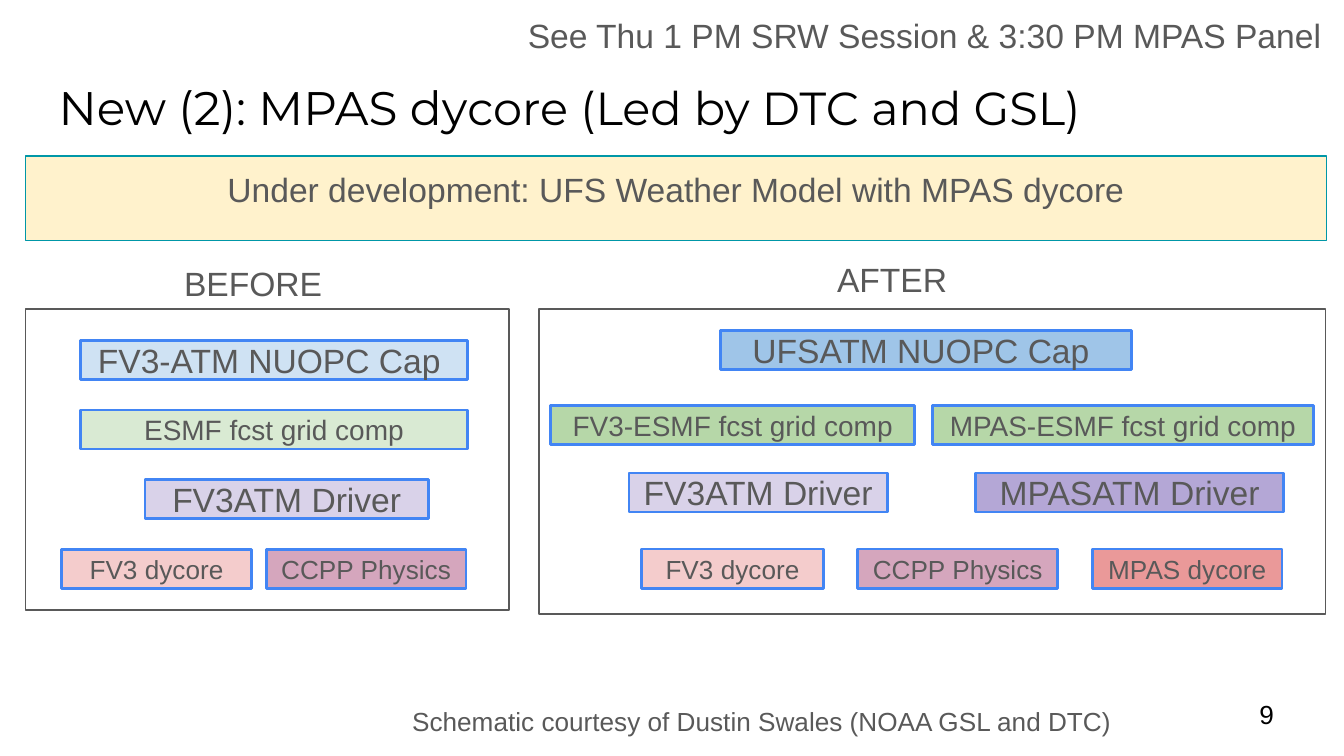
from pptx import Presentation
from pptx.dml.color import RGBColor
from pptx.enum.shapes import MSO_SHAPE as Shape
from pptx.enum.text import MSO_ANCHOR as Anchor, PP_ALIGN as Align
from pptx.util import Cm, Pt

BLACK = RGBColor(0x00, 0x00, 0x00)
GRAY = RGBColor(0x59, 0x59, 0x59)
CREAM = RGBColor(0xFF, 0xF2, 0xCC)
TEAL = RGBColor(0x00, 0x97, 0xA7)
BLUE = RGBColor(0x42, 0x85, 0xF4)
PALE_BLUE = RGBColor(0xCF, 0xE2, 0xF3)
SKY_BLUE = RGBColor(0x9F, 0xC5, 0xE8)
PALE_GREEN = RGBColor(0xD9, 0xEA, 0xD3)
GREEN = RGBColor(0xB6, 0xD7, 0xA8)
PALE_PURPLE = RGBColor(0xD9, 0xD2, 0xE9)
PURPLE = RGBColor(0xB4, 0xA7, 0xD6)
PINK = RGBColor(0xF4, 0xCC, 0xCC)
MAUVE = RGBColor(0xD5, 0xA6, 0xBD)
RED = RGBColor(0xEA, 0x99, 0x99)

BLOCK_HEIGHT = 0.74
BEFORE_TOP, BEFORE_PITCH = 6.43, 1.32

BEFORE_ROWS = [
    (18, [("FV3-ATM NUOPC Cap ", 1.52, 7.32, PALE_BLUE)]),
    (15, [("ESMF fcst grid comp", 1.52, 7.32, PALE_GREEN)]),
    (18, [("FV3ATM Driver", 2.74, 5.36, PALE_PURPLE)]),
    (14, [("FV3 dycore", 1.17, 3.58, PINK),
          ("CCPP Physics", 5.03, 3.78, MAUVE)]),
]
AFTER_TOPS = [6.25, 7.67, 8.94, 10.38]
AFTER_ROWS = [
    (18, [("UFSATM NUOPC Cap ", 13.61, 7.77, SKY_BLUE)]),
    (15, [("FV3-ESMF fcst grid comp", 10.41, 6.88, GREEN),
          ("MPAS-ESMF fcst grid comp", 17.63, 7.19, GREEN)]),
    (18, [("FV3ATM Driver", 11.89, 4.88, PALE_PURPLE),
          ("MPASATM Driver", 18.44, 5.82, PURPLE)]),
    (14, [("FV3 dycore", 12.12, 3.45, PINK),
          ("CCPP Physics", 16.21, 3.78, MAUVE),
          ("MPAS dycore", 20.65, 3.58, RED)]),
]


def style_span(span, size, color=GRAY, font="Arial"):
    """Give a run its font, size and colour."""
    span.font.name = font
    span.font.size = Pt(size)
    span.font.color.rgb = color


def set_text(box, text, size, color=GRAY, align=Align.LEFT, anchor=Anchor.TOP):
    """Write one paragraph into a shape with even insets."""
    frame = box.text_frame
    frame.word_wrap = True
    frame.vertical_anchor = anchor
    frame.margin_left = frame.margin_right = Cm(0.25)
    frame.margin_top = frame.margin_bottom = Cm(0.25)
    para = frame.paragraphs[0]
    para.text = text
    para.alignment = align
    for span in para.runs:
        style_span(span, size, color)


def add_label(page, area, text, size, **options):
    """Add a text box at an area given in centimetres."""
    box = page.shapes.add_textbox(*map(Cm, area))
    set_text(box, text, size, **options)
    return box


def add_box(page, area, fill, line, width):
    """Add a flat rectangle, unfilled when fill is None."""
    box = page.shapes.add_shape(Shape.RECTANGLE, *map(Cm, area))
    box.shadow.inherit = False
    if fill is None:
        box.fill.background()
    else:
        box.fill.solid()
        box.fill.fore_color.rgb = fill
    box.line.color.rgb = line
    box.line.width = Pt(width)
    return box


def add_stack(page, tops, rows):
    """Add the rows of component blocks of one architecture."""
    for top, (size, blocks) in zip(tops, rows):
        for text, left, width, fill in blocks:
            box = add_box(page, (left, top, width, BLOCK_HEIGHT), fill, BLUE, 1.5)
            set_text(box, text, size, align=Align.CENTER, anchor=Anchor.MIDDLE)


def add_title(page):
    """Add the title, whose two parts differ slightly in size."""
    box = add_label(page, (0.86, 1.24, 23.67, 1.6), "New (2): MPAS dy", 25.2)
    para = box.text_frame.paragraphs[0]
    para.add_run().text = "core (Led by DTC and GSL)"
    for span, size in zip(para.runs, (25.2, 24.8)):
        style_span(span, size, BLACK, "Montserrat")


def main():
    """Build the before and after comparison slide."""
    deck = Presentation()
    deck.slide_width, deck.slide_height = Cm(25.4), Cm(14.29)
    page = deck.slides.add_slide(deck.slide_layouts[6])

    add_title(page)
    banner = add_box(page, (0.48, 2.95, 24.59, 1.6), CREAM, TEAL, 0.75)
    set_text(banner, "Under development: UFS Weather Model with MPAS dycore", 18,
             align=Align.CENTER)
    add_label(page, (7.85, 0.03, 17.55, 1.27),
              "See Thu 1 PM SRW Session & 3:30 PM MPAS Panel ", 18, align=Align.RIGHT)

    add_box(page, (0.48, 5.84, 9.14, 5.69), None, GRAY, 0.75)
    add_box(page, (10.19, 5.84, 14.86, 5.77), None, GRAY, 0.75)
    add_label(page, (3.23, 4.72, 3.28, 1.27), "BEFORE", 18)
    add_label(page, (15.57, 4.65, 2.69, 1.27), "AFTER", 18)
    before_tops = [BEFORE_TOP + BEFORE_PITCH * row for row in range(len(BEFORE_ROWS))]
    add_stack(page, before_tops, BEFORE_ROWS)
    add_stack(page, AFTER_TOPS, AFTER_ROWS)

    add_label(page, (7.54, 13.08, 13.84, 1.12),
              "Schematic courtesy of Dustin Swales (NOAA GSL and DTC)", 14)
    add_label(page, (23.55, 12.95, 1.52, 1.09), "9", 14, color=BLACK,
              anchor=Anchor.MIDDLE)
    deck.save("out.pptx")


if __name__ == "__main__":
    main()
